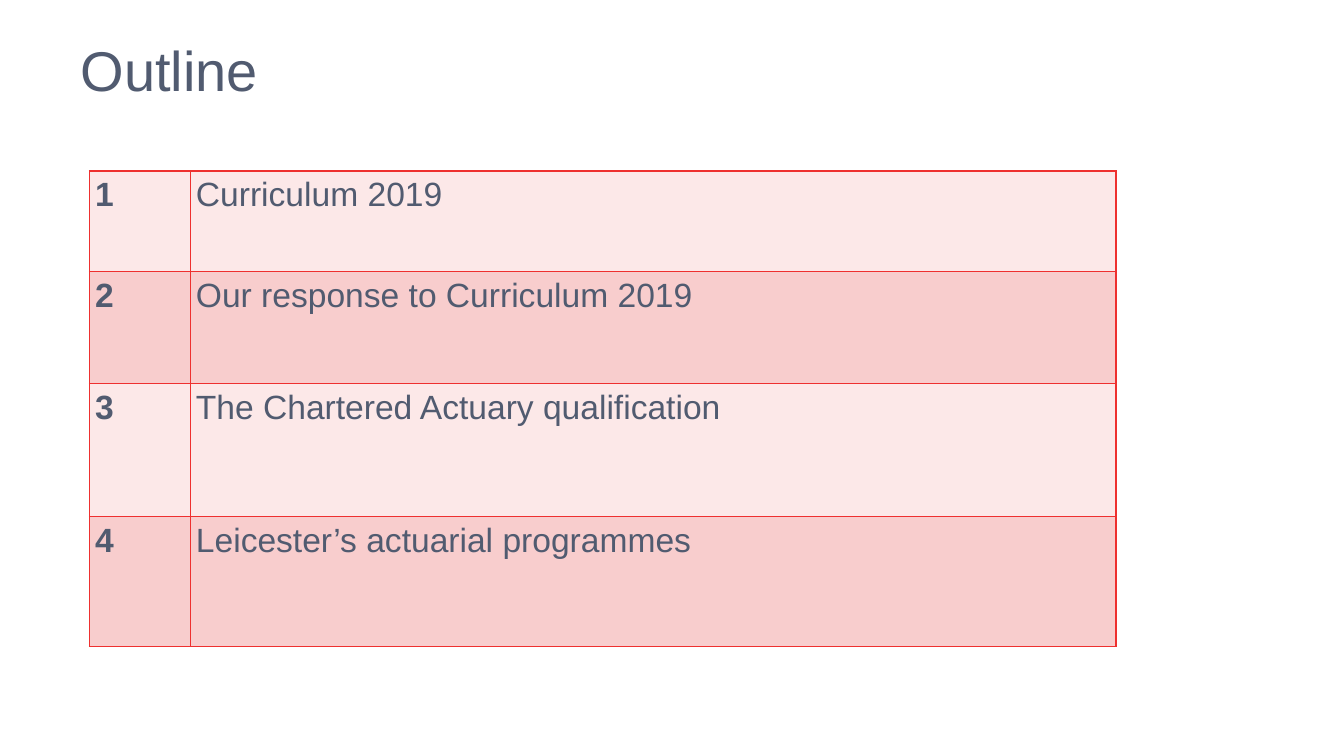
from collections import namedtuple

from lxml.etree import SubElement
from pptx import Presentation
from pptx.dml.color import RGBColor as Rgb
from pptx.enum.text import MSO_ANCHOR as Anchor, PP_ALIGN as Align
from pptx.oxml.ns import qn
from pptx.util import Pt

PX = 9525
FONT = "Arial"
COLORS = {"text": "515B70", "border": "EE302F", "light": "FCE8E8", "dark": "F8CDCD"}
Box = namedtuple("Box", "left top width height")

TOPICS = [
    "Curriculum 2019",
    "Our response to Curriculum 2019",
    "The Chartered Actuary qualification",
    "Leicester’s actuarial programmes",
]
ROW_HEIGHTS = [72, 80, 95, 93]
NUMBER_WIDTH = 72


def add_text(para, text, size, bold=False):
    """Add one formatted run to a paragraph."""
    span = para.add_run()
    span.text = text
    span.font.name = FONT
    span.font.size = Pt(size)
    span.font.bold = bold
    span.font.color.rgb = Rgb.from_string(COLORS["text"])


def add_borders(cell):
    """Draw a thin line on all four sides of a cell."""
    properties = cell._tc.get_or_add_tcPr()
    for side in ("lnL", "lnR", "lnT", "lnB"):
        line = SubElement(properties, qn(f"a:{side}"), w=str(Pt(1)))
        fill = SubElement(line, qn("a:solidFill"))
        SubElement(fill, qn("a:srgbClr"), val=COLORS["border"])


def fill_cell(cell, text, color, bold):
    """Give a cell its borders, fill, margins and text."""
    add_borders(cell)
    cell.fill.solid()
    cell.fill.fore_color.rgb = Rgb.from_string(COLORS[color])
    cell.margin_left = cell.margin_right = 4 * PX
    cell.margin_top = cell.margin_bottom = 0
    para = cell.text_frame.paragraphs[0]
    para.line_spacing = 1.15
    add_text(para, text, 18, bold)


def place_title(page, box, text):
    """Move the title placeholder into the box and fill it."""
    title = page.shapes.title
    title.left, title.top, title.width, title.height = (n * PX for n in box)
    frame = title.text_frame
    frame.vertical_anchor = Anchor.MIDDLE
    para = frame.paragraphs[0]
    para.alignment = Align.LEFT
    add_text(para, text, 30)


def place_outline(page, box, topics):
    """Build the numbered table of topics inside the box."""
    table = page.shapes.add_table(len(topics), 2, *(n * PX for n in box)).table
    table.first_row = table.horz_banding = False
    table.columns[0].width = NUMBER_WIDTH * PX
    table.columns[1].width = (box.width - NUMBER_WIDTH) * PX
    for index, (topic, height) in enumerate(zip(topics, ROW_HEIGHTS)):
        table.rows[index].height = height * PX
        color = "dark" if index % 2 else "light"
        fill_cell(table.cell(index, 0), str(index + 1), color, True)
        fill_cell(table.cell(index, 1), topic, color, False)


def main():
    """Build and save the deck."""
    deck = Presentation()
    deck.slide_width, deck.slide_height = 960 * PX, 540 * PX
    page = deck.slides.add_slide(deck.slide_layouts[5])
    place_title(page, Box(48, 19, 864, 60), "Outline")
    place_outline(page, Box(64, 122, 733, sum(ROW_HEIGHTS)), TOPICS)
    deck.save("out.pptx")


if __name__ == "__main__":
    main()
